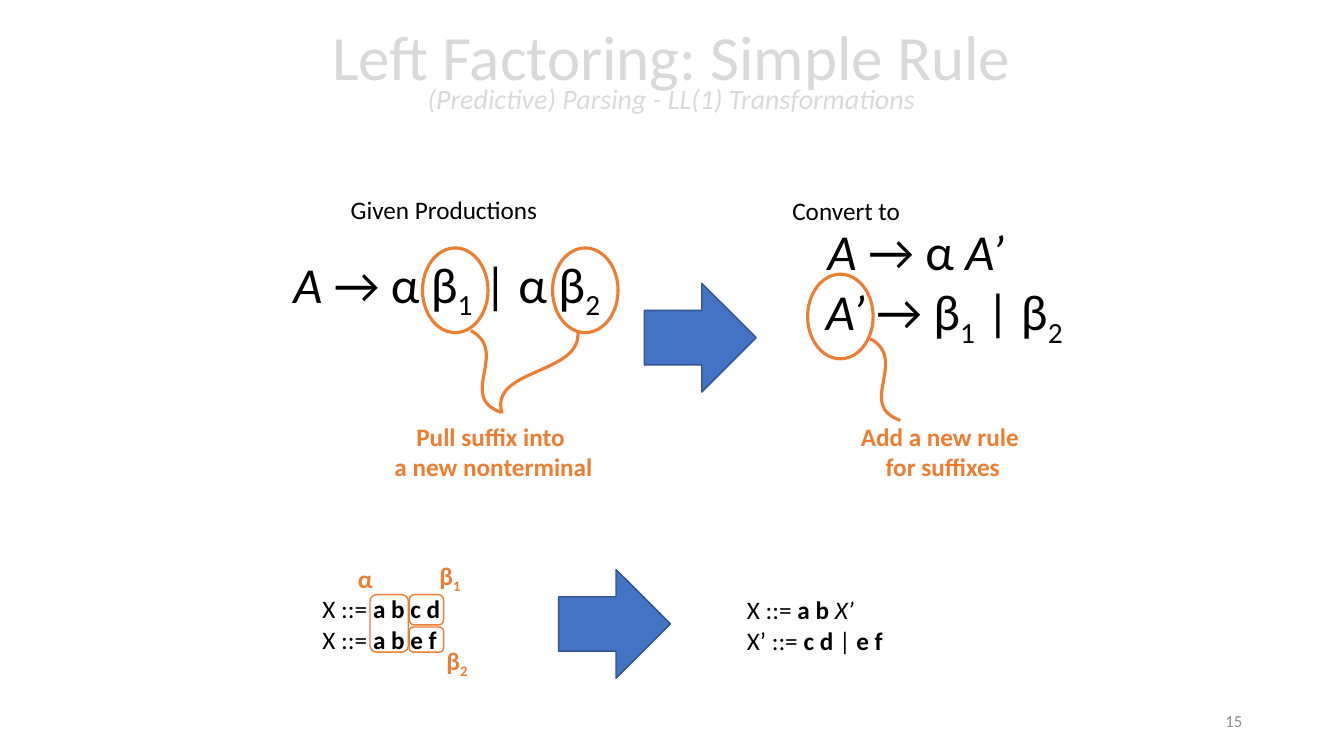
from dataclasses import dataclass

from pptx import Presentation
from pptx.dml.color import RGBColor
from pptx.enum.shapes import MSO_SHAPE
from pptx.enum.text import MSO_ANCHOR, PP_ALIGN
from pptx.util import Inches, Pt

ELLIPSE, ARROW, ROUNDED = MSO_SHAPE.OVAL, MSO_SHAPE.RIGHT_ARROW, MSO_SHAPE.ROUNDED_RECTANGLE
LEFT, CENTER, RIGHT = PP_ALIGN.LEFT, PP_ALIGN.CENTER, PP_ALIGN.RIGHT
TOP, MIDDLE = MSO_ANCHOR.TOP, MSO_ANCHOR.MIDDLE

FONT = "Calibri"
BLACK, ORANGE, BLUE, DARK_BLUE = "000000", "ED7D31", "4472C4", "325491"
PALE_GREY, GREY = "D9D9D9", "8C8C8C"
CURVE_STEPS = 32

Box = tuple[float, float, float, float]
Point = tuple[float, float]


@dataclass
class Run:
    text: str
    bold: bool = False
    italic: bool = False
    subscript: bool = False
    size: float | None = None


@dataclass
class Label:
    box: Box
    lines: list[list[Run]]
    size: float = 18
    color: str = BLACK
    align: PP_ALIGN = LEFT
    anchor: MSO_ANCHOR = TOP
    wrap: bool = False
    indents: tuple[float, ...] = ()
    spacing: float = 1.0


@dataclass
class Figure:
    kind: MSO_SHAPE
    box: Box
    line: str = ORANGE
    weight: float = 2.25
    fill: str | None = None


def bold(text: str) -> Run:
    return Run(text, bold=True)


def italic(text: str) -> Run:
    return Run(text, italic=True)


def sub(text: str, is_bold: bool = False) -> Run:
    return Run(text, bold=is_bold, subscript=True)


def highlight(left: float, top: float) -> Figure:
    return Figure(ELLIPSE, (left, top, 0.65, 0.84))


def conversion_arrow(left: float, top: float) -> Figure:
    return Figure(ARROW, (left, top, 1.11, 1.08), DARK_BLUE, 1, BLUE)


def bracket(left: float, top: float, width: float, height: float) -> Figure:
    return Figure(ROUNDED, (left, top, width, height), weight=1)


TITLE = Label((1.79, 0.03, 9.74, 1.45),
              [[Run("Left Factoring: Simple Rule"), Run("\v"),
                Run("(Predictive) Parsing - LL(1) Transformations", italic=True, size=20)]],
              45, PALE_GREY, CENTER, MIDDLE, True, spacing=0.7)
LABELS = [
    TITLE,
    Label((9.42, 6.95, 3, 0.4), [[Run("15")]], 12, GREY, RIGHT, MIDDLE, True),
    Label((6.99, 2.13, 3.69, 1.31),
          [[italic("A"), Run(" → α "), italic("A’")],
           [italic("A’"), Run(" → β"), sub("1"), Run(" | β"), sub("2")]],
          36, align=CENTER, indents=(0.5, 1.06)),
    Label((2.77, 2.46, 3.32, 0.71),
          [[italic("A"), Run(" → α β"), sub("1"), Run(" | α β"), sub("2")]],
          36, align=CENTER),
    Label((3.71, 4.13, 2.37, 0.71),
          [[bold("Pull suffix into ")], [bold("a new nonterminal")]],
          color=ORANGE, align=CENTER),
    Label((8.29, 4.13, 2.12, 0.71),
          [[bold("Add a new rule ")], [bold("for suffixes")]],
          color=ORANGE, align=CENTER),
    Label((3.38, 1.88, 2.07, 0.4), [[Run("Given Productions")]]),
    Label((7.76, 1.89, 1.28, 0.4), [[Run("Convert to")]]),
    Label((3.1, 5.84, 1.38, 0.71),
          [[Run("X ::= "), bold("a b c d")], [Run("X ::= "), bold("a b e f")]]),
    Label((3.45, 5.54, 0.35, 0.4), [[bold("α")]], color=ORANGE),
    Label((4.26, 5.51, 0.42, 0.4), [[bold("β"), sub("1", True)]], color=ORANGE),
    Label((4.33, 6.35, 0.42, 0.4), [[bold("β"), sub("2", True)]], color=ORANGE),
    Label((7.31, 5.85, 1.57, 0.71),
          [[Run("X ::= "), bold("a b "), italic("X’")],
           [Run("X’ ::= "), bold("c d "), Run("| "), bold("e f")]]),
]
FIGURES = [
    highlight(4.19, 2.46),
    highlight(5.48, 2.46),
    highlight(8.01, 2.72),
    conversion_arrow(6.39, 2.81),
    conversion_arrow(5.54, 5.65),
    bracket(3.67, 5.9, 0.38, 0.57),
    bracket(4.06, 5.9, 0.34, 0.3),
    bracket(4.06, 6.22, 0.34, 0.25),
]
# Start, two control points and end of each callout's tail
TAILS: list[list[Point]] = [
    [(4.97, 4.09), (4.53, 3.94), (5.06, 3.49), (4.67, 3.28)],
    [(4.98, 4.1), (4.84, 3.65), (5.79, 3.72), (5.73, 3.28)],
    [(8.93, 4.17), (8.49, 4.02), (9.02, 3.57), (8.63, 3.36)],
]


def rgb(color: str) -> RGBColor:
    return RGBColor.from_string(color)


def style_shape(shape, line: str, weight: float, fill: str | None = None) -> None:
    shape.shadow.inherit = False
    if fill:
        shape.fill.solid()
        shape.fill.fore_color.rgb = rgb(fill)
    else:
        shape.fill.background()
    shape.line.color.rgb = rgb(line)
    shape.line.width = Pt(weight)


def draw_figure(slide, figure: Figure) -> None:
    shape = slide.shapes.add_shape(figure.kind, *map(Inches, figure.box))
    style_shape(shape, figure.line, figure.weight, figure.fill)


def draw_tail(slide, controls: list[Point]) -> None:
    """Draw a cubic Bézier curve as a smooth open outline."""
    points = []
    for step in range(CURVE_STEPS + 1):
        t = step / CURVE_STEPS
        weights = ((1 - t) ** 3, 3 * t * (1 - t) ** 2, 3 * t * t * (1 - t), t ** 3)
        points.append(tuple(Inches(sum(w * c[axis] for w, c in zip(weights, controls)))
                            for axis in (0, 1)))
    builder = slide.shapes.build_freeform(*points[0])
    builder.add_line_segments(points[1:], close=False)
    style_shape(builder.convert_to_shape(), ORANGE, 2.25)


def draw_label(slide, label: Label) -> None:
    frame = slide.shapes.add_textbox(*map(Inches, label.box)).text_frame
    frame.word_wrap = label.wrap
    frame.vertical_anchor = label.anchor
    for index, line in enumerate(label.lines):
        paragraph = frame.add_paragraph() if index else frame.paragraphs[0]
        paragraph.alignment = label.align
        paragraph.line_spacing = label.spacing
        if label.indents:
            paragraph._p.get_or_add_pPr().set("marL", str(Inches(label.indents[index])))
        for part in line:
            if part.text == "\v":
                paragraph.add_line_break()
                continue
            run = paragraph.add_run()
            run.text = part.text
            font = run.font
            font.name, font.size = FONT, Pt(part.size or label.size)
            font.bold, font.italic = part.bold, part.italic
            font.color.rgb = rgb(label.color)
            if part.subscript:
                run._r.get_or_add_rPr().set("baseline", "-25000")


def main() -> None:
    deck = Presentation()
    deck.slide_width, deck.slide_height = Inches(13.33), Inches(7.5)
    slide = deck.slides.add_slide(deck.slide_layouts[6])
    for label in LABELS:
        draw_label(slide, label)
    for figure in FIGURES:
        draw_figure(slide, figure)
    for controls in TAILS:
        draw_tail(slide, controls)
    deck.save("out.pptx")


if __name__ == "__main__":
    main()
